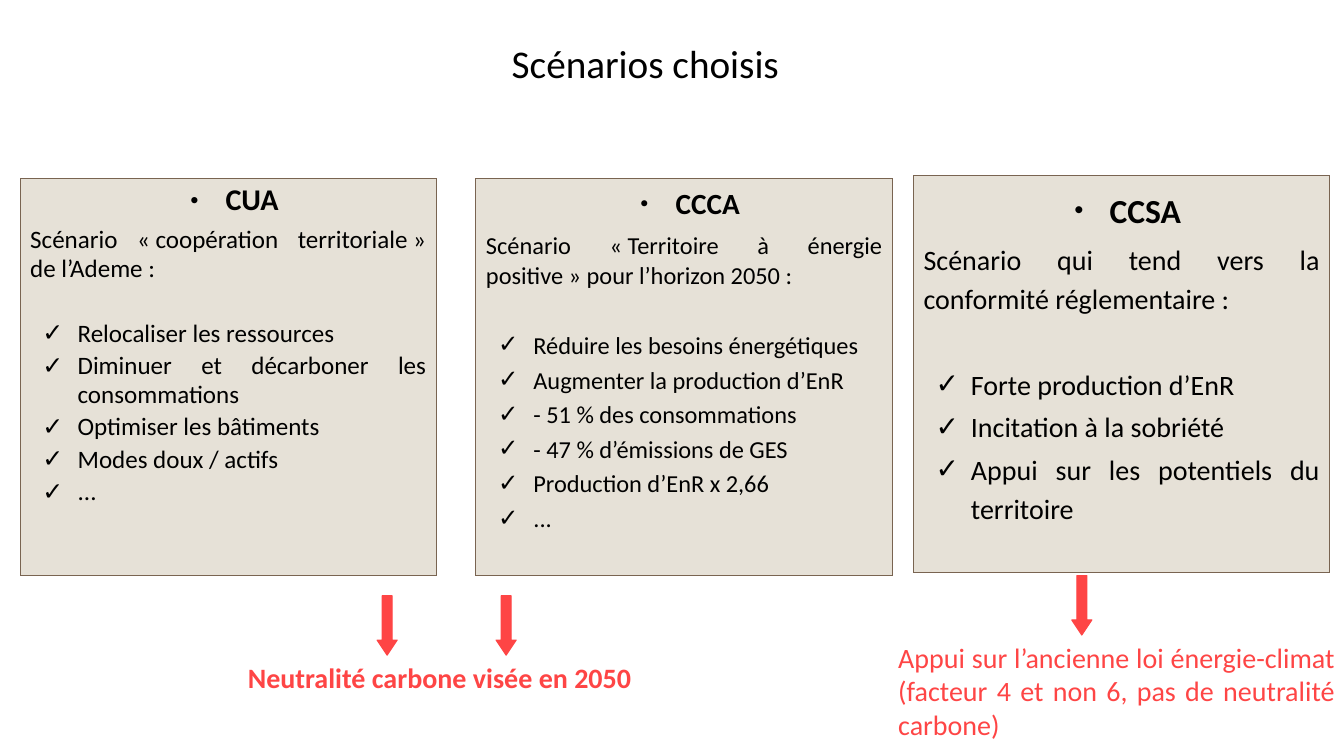
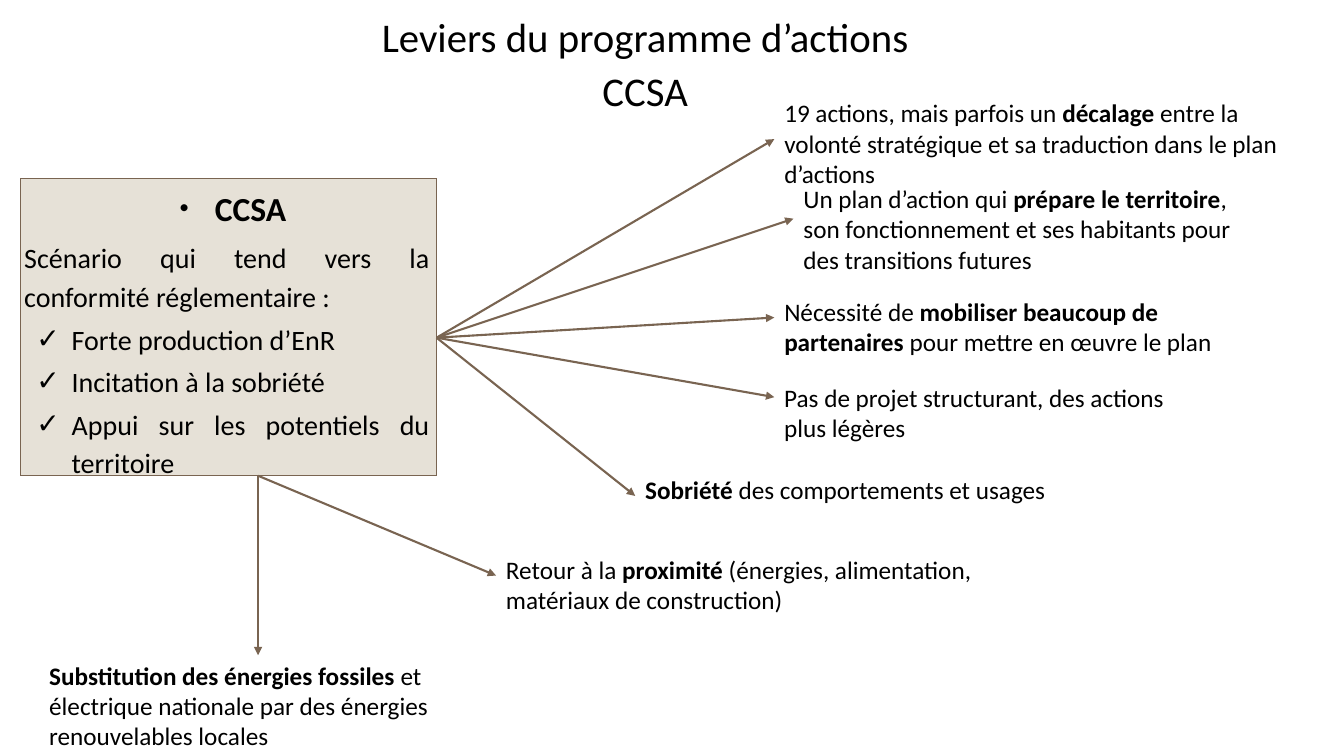
from lxml import etree
from pptx import Presentation
from pptx.dml.color import RGBColor
from pptx.enum.shapes import MSO_CONNECTOR, MSO_SHAPE
from pptx.enum.text import MSO_ANCHOR, MSO_AUTO_SIZE, PP_ALIGN
from pptx.oxml.ns import qn
from pptx.util import Inches, Pt

BLACK = RGBColor(0x00, 0x00, 0x00)
RED = RGBColor(0xFE, 0x45, 0x45)
SAND = RGBColor(0xE6, 0xE1, 0xD7)
BROWN = RGBColor(0x79, 0x64, 0x51)
FONT = "Calibri"

LEFT, CENTER, JUSTIFY = PP_ALIGN.LEFT, PP_ALIGN.CENTER, PP_ALIGN.JUSTIFY
TOP = MSO_ANCHOR.TOP
NO_AUTOFIT = MSO_AUTO_SIZE.NONE
STRAIGHT = MSO_CONNECTOR.STRAIGHT
DOWN_ARROW = MSO_SHAPE.DOWN_ARROW
CONTENT_LAYOUT, COMPARISON_LAYOUT = 1, 4

CARD_WIDTH = 4.13
BLANK_LINE = 1.22
INSETS = (0.1, 0.05, 0.1, 0.05)
CCSA_INTRO = "Scénario qui tend vers la conformité réglementaire :"
CCSA_ITEMS = [
    "Forte production d’EnR",
    "Incitation à la sobriété",
    "Appui sur les potentiels du territoire",
]


def set_attributes(target, values):
    for name, value in values.items():
        setattr(target, name, value)


def place(shape, box):
    names = ("left", "top", "width", "height")
    set_attributes(shape, {name: Inches(value) for name, value in zip(names, box)})


def prepare_frame(shape, insets=INSETS):
    frame = shape.text_frame
    names = ("margin_left", "margin_top", "margin_right", "margin_bottom")
    set_attributes(frame, {name: Inches(value) for name, value in zip(names, insets)})
    set_attributes(frame, {
        "word_wrap": True, "auto_size": NO_AUTOFIT, "vertical_anchor": TOP,
    })
    return frame


def get_paragraph(frame, index):
    return frame.add_paragraph() if index else frame.paragraphs[0]


def add_run(paragraph, text, size, color=BLACK, bold=False):
    run = paragraph.add_run()
    run.text = text
    set_attributes(run.font, {"name": FONT, "size": Pt(size), "bold": bold})
    run.font.color.rgb = color


def set_indent(paragraph, margin, first_line=0):
    properties = paragraph._p.get_or_add_pPr()
    properties.set("marL", str(Inches(margin)))
    properties.set("indent", str(Inches(first_line)))
    return properties


def set_bullet(paragraph, character=None, percent=100):
    if character is None:
        etree.SubElement(set_indent(paragraph, 0), qn("a:buNone"))
        return
    properties = set_indent(paragraph, 0.47, -0.35)
    color = etree.SubElement(properties, qn("a:buClr"))
    etree.SubElement(color, qn("a:srgbClr"), val=str(BLACK))
    etree.SubElement(properties, qn("a:buSzPct"), val=str(percent * 1000))
    etree.SubElement(properties, qn("a:buFont"), typeface=FONT)
    etree.SubElement(properties, qn("a:buChar"), char=character)


def write_title(slide, lines, box, size, spacing):
    place(slide.shapes.title, box)
    frame = prepare_frame(slide.shapes.title)
    for index, line in enumerate(lines):
        paragraph = get_paragraph(frame, index)
        set_indent(paragraph, 0.12)
        set_attributes(paragraph, {
            "alignment": CENTER, "line_spacing": spacing,
            "space_before": Pt(14.2 if index else 0),
        })
        add_run(paragraph, line, size)


def fill_card(card, box, heading, intro, items, size, spacing, gap=True, insets=INSETS):
    place(card, box)
    card.fill.solid()
    card.fill.fore_color.rgb = SAND
    card.line.color.rgb = BROWN
    card.line.width = Pt(0)
    frame = prepare_frame(card, insets)
    intro_after = 5.6 + size * BLANK_LINE * spacing if gap else 2.8
    rows = [
        (heading, "●", 45, CENTER, round(size * 1.2, 1), 5.7),
        (intro, None, 100, JUSTIFY, size, intro_after),
    ]
    rows += [(item, "✓", 100, JUSTIFY, size, 2.8) for item in items]
    for index, (text, bullet, percent, alignment, text_size, after) in enumerate(rows):
        paragraph = get_paragraph(frame, index)
        set_bullet(paragraph, bullet, percent)
        set_attributes(paragraph, {
            "alignment": alignment, "line_spacing": spacing,
            "space_before": Pt(0), "space_after": Pt(after),
        })
        add_run(paragraph, text, text_size, bold=index == 0)


def add_text(slide, box, parts, size=18, color=BLACK, alignment=LEFT):
    shape = slide.shapes.add_textbox(*[Inches(value) for value in box])
    paragraph = prepare_frame(shape).paragraphs[0]
    paragraph.alignment = alignment
    for index, part in enumerate(parts):
        if part:
            add_run(paragraph, part, size, color, bold=index == 1)


def add_down_arrow(slide, left, top):
    box = [Inches(value) for value in (left, top, 0.2, 0.59)]
    arrow = slide.shapes.add_shape(DOWN_ARROW, *box)
    arrow.shadow.inherit = False
    arrow.adjustments[0] = 0.5
    arrow.adjustments[1] = 0.75
    arrow.fill.solid()
    arrow.fill.fore_color.rgb = RED
    arrow.line.color.rgb = RED
    arrow.line.width = Pt(0)


def add_link(slide, start, end):
    points = [Inches(value) for value in (*start, *end)]
    link = slide.shapes.add_connector(STRAIGHT, *points)
    link.line.color.rgb = BROWN
    link.line.width = Pt(1.5)
    etree.SubElement(link.line._get_or_add_ln(), qn("a:tailEnd"), type="triangle")
    etree.SubElement(link._element.spPr, qn("a:effectLst"))


def build_scenarios(presentation):
    slide = presentation.slides.add_slide(presentation.slide_layouts[COMPARISON_LAYOUT])
    write_title(slide, ["Scénarios choisis"], (0.59, 0.39, 11.5, 0.59), 28, 0.9)
    cards = [
        (0.2, 1.77, INSETS, 17.9, 0.95, "CUA",
         "Scénario «\u00a0coopération territoriale\u00a0» de l’Ademe\u00a0:",
         ["Relocaliser les ressources", "Diminuer et décarboner les consommations",
          "Optimiser les bâtiments", "Modes doux / actifs", "..."]),
        (4.72, 1.77, INSETS, 17.4, 1.05, "CCCA",
         "Scénario «\u00a0Territoire à énergie positive\u00a0» pour l’horizon 2050 :",
         ["Réduire les besoins énergétiques", "Augmenter la production d’EnR",
          "- 51\u00a0% des consommations", "- 47\u00a0% d’émissions de GES",
          "Production d’EnR x 2,66", "..."]),
        (9.06, 1.74, (0.1, 0.08, 0.1, 0.05), 20, 1.15, "CCSA", CCSA_INTRO, CCSA_ITEMS),
    ]
    bodies = list(slide.placeholders)[1:]
    for body, (left, top, insets, size, spacing, heading, intro, items) in zip(bodies, cards):
        box = (left, top, CARD_WIDTH, 3.94)
        fill_card(body, box, heading, intro, items, size, spacing, insets=insets)
    for unused in bodies[len(cards):]:
        unused._element.getparent().remove(unused._element)
    for left, top in [(3.74, 5.91), (4.92, 5.91), (10.63, 5.71)]:
        add_down_arrow(slide, left, top)
    add_text(slide, (2.36, 6.5, CARD_WIDTH, 0.59),
             ("", "Neutralité carbone visée en 2050"), 20, RED)
    add_text(slide, (8.81, 6.3, 4.53, 0.98),
             ("Appui sur l’ancienne loi énergie-climat "
              "(facteur 4 et non 6, pas de neutralité carbone)",), 20, RED, JUSTIFY)


def build_levers(presentation):
    slide = presentation.slides.add_slide(presentation.slide_layouts[CONTENT_LAYOUT])
    write_title(slide, ["Leviers du programme d’actions", "CCSA"],
                (0.59, 0.2, 11.5, 0.98), 29.1, 0.7)
    fill_card(slide.placeholders[1], (0.2, 1.77, CARD_WIDTH, 2.95), "CCSA",
              CCSA_INTRO, CCSA_ITEMS, 20, 1.15, gap=False, insets=(0.04, 0.03, 0.07, 0))
    card_side, card_bottom = (4.33, 3.35), (2.56, 4.72)
    levers = [
        (card_side, (7.68, 1.38), (7.68, 0.92, 5.51, 0.85),
         ("19 actions, mais parfois un ", "décalage",
          " entre la volonté stratégique et sa traduction dans le plan d’actions")),
        (card_side, (7.87, 2.17), (7.87, 1.77, 4.72, 0.85),
         ("Un plan d’action qui ", "prépare le territoire",
          ", son fonctionnement et ses habitants pour des transitions futures")),
        (card_side, (7.68, 3.15), (7.68, 2.89, 4.72, 0.85),
         ("Nécessité de ", "mobiliser beaucoup de partenaires",
          " pour mettre en œuvre le plan")),
        (card_side, (7.68, 3.94), (7.68, 3.74, 4.13, 0.6),
         ("Pas de projet structurant, des actions plus légères",)),
        (card_side, (6.3, 4.92), (6.3, 4.66, 5.71, 0.35),
         ("", "Sobriété", " des comportements et usages")),
        (card_bottom, (4.92, 5.71), (4.92, 5.45, 4.92, 0.85),
         ("Retour à la ", "proximité",
          " (énergies, alimentation, matériaux de construction)")),
        (card_bottom, (2.56, 6.5), (0.39, 6.5, 4.13, 1.11),
         ("", "Substitution des énergies fossiles",
          " et électrique nationale par des énergies renouvelables locales")),
    ]
    for start, end, box, parts in levers:
        add_link(slide, start, end)
        add_text(slide, box, parts)


def main():
    presentation = Presentation()
    presentation.slide_width = Inches(13.33)
    presentation.slide_height = Inches(7.5)
    build_scenarios(presentation)
    build_levers(presentation)
    presentation.save("out.pptx")


if __name__ == "__main__":
    main()
